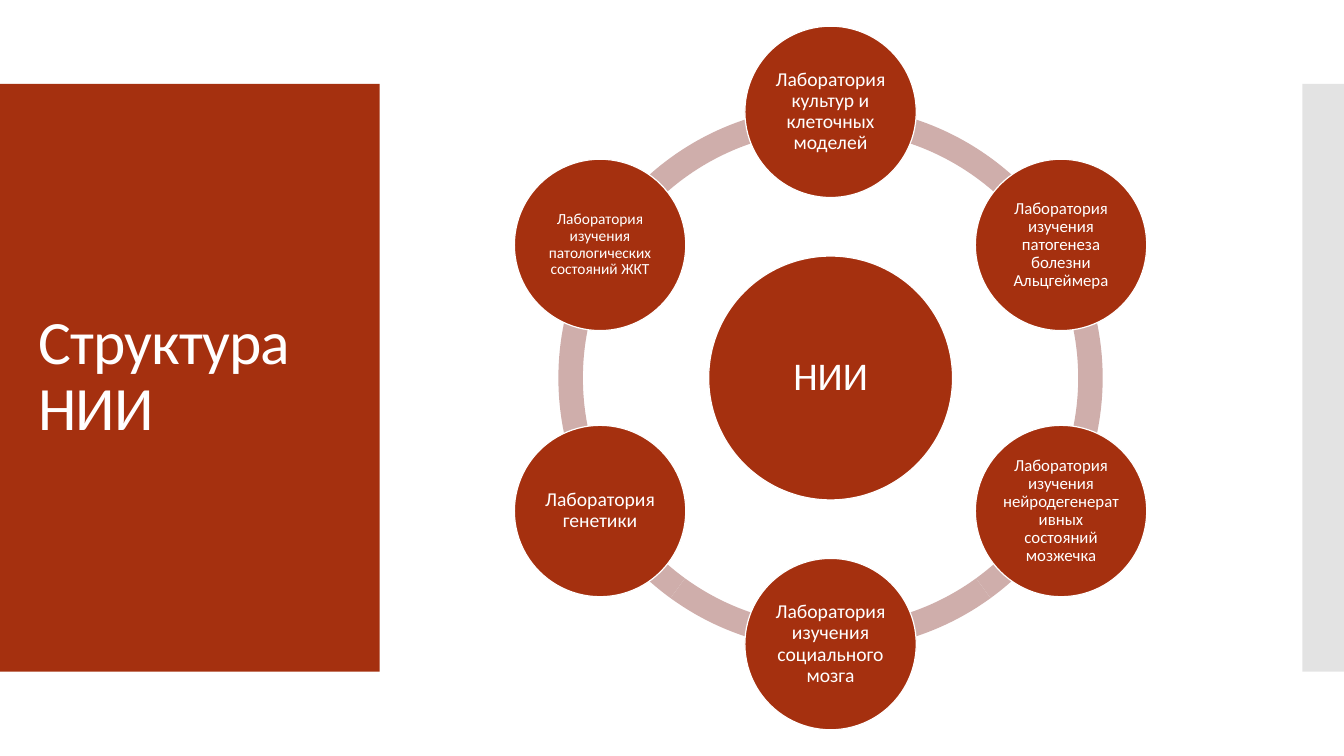
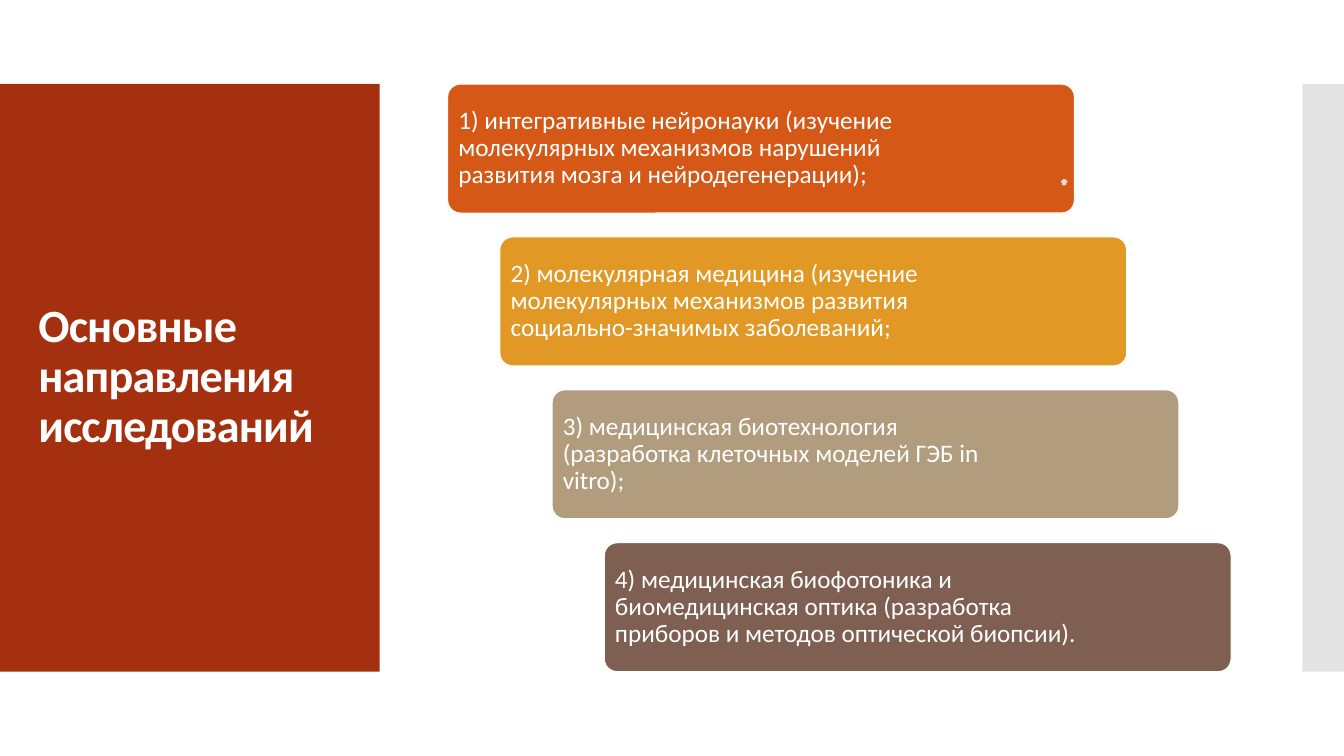
from dataclasses import dataclass
from math import cos, radians, sin

from lxml.etree import SubElement
from pptx import Presentation
from pptx.dml.color import RGBColor
from pptx.enum.shapes import MSO_SHAPE
from pptx.enum.text import MSO_ANCHOR, MSO_AUTO_SIZE, PP_ALIGN
from pptx.oxml.ns import qn
from pptx.util import Pt


@dataclass(frozen=True)
class Theme:
    font: str = "Calibri"
    white: str = "FFFFFF"
    rust: str = "A5300F"
    edge: str = "C8C8C8"
    ring: str = "CFAEAB"
    directions: tuple = ("D55816", "E19825", "B19C7D", "7F5F52")
    arrows: tuple = ("EFD1CC", "F4DDCD", "E4DED7")
    title: int = 44
    long_title: int = 33
    hub: int = 28
    direction: int = 18
    outline: float = 0.85


THEME = Theme()


def write_text(shape, text, *, size, bold=False, align=PP_ALIGN.LEFT,
               margins=(7.2, 3.6, 7.2, 3.6), tracking=None):
    frame = shape.text_frame
    frame.word_wrap = True
    frame.auto_size = MSO_AUTO_SIZE.NONE
    frame.vertical_anchor = MSO_ANCHOR.MIDDLE
    frame.margin_left, frame.margin_top, frame.margin_right, frame.margin_bottom = map(Pt, margins)
    paragraph = frame.paragraphs[0]
    paragraph.alignment = align
    paragraph.line_spacing = 0.9
    run = paragraph.add_run()
    run.text = text
    run.font.name = THEME.font
    run.font.size = Pt(size)
    run.font.bold = bold
    run.font.color.rgb = RGBColor.from_string(THEME.white)
    if tracking is not None:
        run.font._element.set("spc", str(round(tracking * 100)))


def draw_shape(slide, preset, box, fill, *, line=None, opacity=None, adjustments=()):
    shape = slide.shapes.add_shape(preset, *map(Pt, box))
    shape.shadow.inherit = False
    for index, value in enumerate(adjustments):
        shape.adjustments[index] = value
    shape.fill.solid()
    shape.fill.fore_color.rgb = RGBColor.from_string(fill)
    if line:
        shape.line.color.rgb = RGBColor.from_string(line)
        shape.line.width = Pt(THEME.outline)
    else:
        shape.line.fill.background()
    if opacity is not None:
        for color in shape.element.spPr.iter(qn("a:srgbClr")):
            SubElement(color, qn("a:alpha")).set("val", str(opacity * 1000))
    return shape


presentation = Presentation()
presentation.slide_width, presentation.slide_height = Pt(960), Pt(540)

layout = presentation.slide_layouts[5]
layout_title, *footers = layout.placeholders
for footer in footers:
    footer.element.getparent().remove(footer.element)
layout_title.left, layout_title.top = Pt(20.2), Pt(88.6)
layout_title.width, layout_title.height = Pt(231.8), Pt(362.2)

structure = presentation.slides.add_slide(layout)
research = presentation.slides.add_slide(layout)

title_band = draw_shape(structure, MSO_SHAPE.RECTANGLE, (0, 60, 271.2, 419.8), THEME.rust)
edge_band = draw_shape(structure, MSO_SHAPE.RECTANGLE, (930.2, 60, 29.8, 419.8), THEME.edge, opacity=50)
for band in (edge_band, title_band):
    layout.shapes.element.insert(2, band.element)

write_text(structure.shapes.title, "Структура НИИ", size=THEME.title, tracking=-0.6)
write_text(research.shapes.title, "Основные направления исследований",
           size=THEME.long_title, bold=True, tracking=-0.6)

center_x, center_y = 593.3, 270
ring_size, orbit = 388.8, 190.1
hub_size, lab_size = 174.2, 122.4

arc_angles = (18, 54, 90, 126, 162, 198)
for start, end in zip(arc_angles, arc_angles[1:] + arc_angles[:1]):
    draw_shape(structure, MSO_SHAPE.BLOCK_ARC,
               (center_x - ring_size / 2, center_y - ring_size / 2, ring_size, ring_size),
               THEME.ring, adjustments=(start * 0.6, end * 0.6, 0.045))

hub = draw_shape(structure, MSO_SHAPE.OVAL,
                 (center_x - hub_size / 2, center_y - hub_size / 2, hub_size, hub_size),
                 THEME.rust, line=THEME.white)
write_text(hub, "НИИ", size=THEME.hub, align=PP_ALIGN.CENTER, margins=(2.5,) * 4)

labs = (
    ("Лаборатория культур и клеточных моделей", 14),
    ("Лаборатория изучения патогенеза болезни Альцгеймера", 12),
    ("Лаборатория изучения нейродегенеративных состояний мозжечка", 12),
    ("Лаборатория изучения социального мозга", 14),
    ("Лаборатория генетики", 14),
    ("Лаборатория изучения патологических состояний ЖКТ", 11),
)
for position, (lab_name, size) in enumerate(labs):
    angle = radians(position * 360 / len(labs) - 90)
    left = center_x + orbit * cos(angle) - lab_size / 2
    top = center_y + orbit * sin(angle) - lab_size / 2
    lab = draw_shape(structure, MSO_SHAPE.OVAL, (left, top, lab_size, lab_size),
                     THEME.rust, line=THEME.white)
    write_text(lab, lab_name, size=size, align=PP_ALIGN.CENTER, margins=(1.4,) * 4)

directions = (
    "1) интегративные нейронауки (изучение молекулярных механизмов нарушений развития мозга и нейродегенерации);",
    "2) молекулярная медицина (изучение молекулярных механизмов развития социально-значимых заболеваний;",
    "3) медицинская биотехнология (разработка клеточных моделей ГЭБ in vitro);",
    "4) медицинская биофотоника и биомедицинская оптика (разработка приборов и методов оптической биопсии).",
)
for step, (description, color) in enumerate(zip(directions, THEME.directions)):
    direction = draw_shape(research, MSO_SHAPE.ROUNDED_RECTANGLE,
                           (319.7 + step * 37.3, 60 + step * 109.2, 447.8, 92.2),
                           color, line=THEME.white, adjustments=(0.1,))
    write_text(direction, description, size=THEME.direction, margins=(5, 5, 102.2, 5))

for color in THEME.arrows:
    arrow = draw_shape(research, MSO_SHAPE.DOWN_ARROW, (758.2, 128.2, 3.8, 3.6),
                       color, line=color, opacity=90, adjustments=(0.55, 0.45))
    arrow.rotation = 180

presentation.save("out.pptx")
